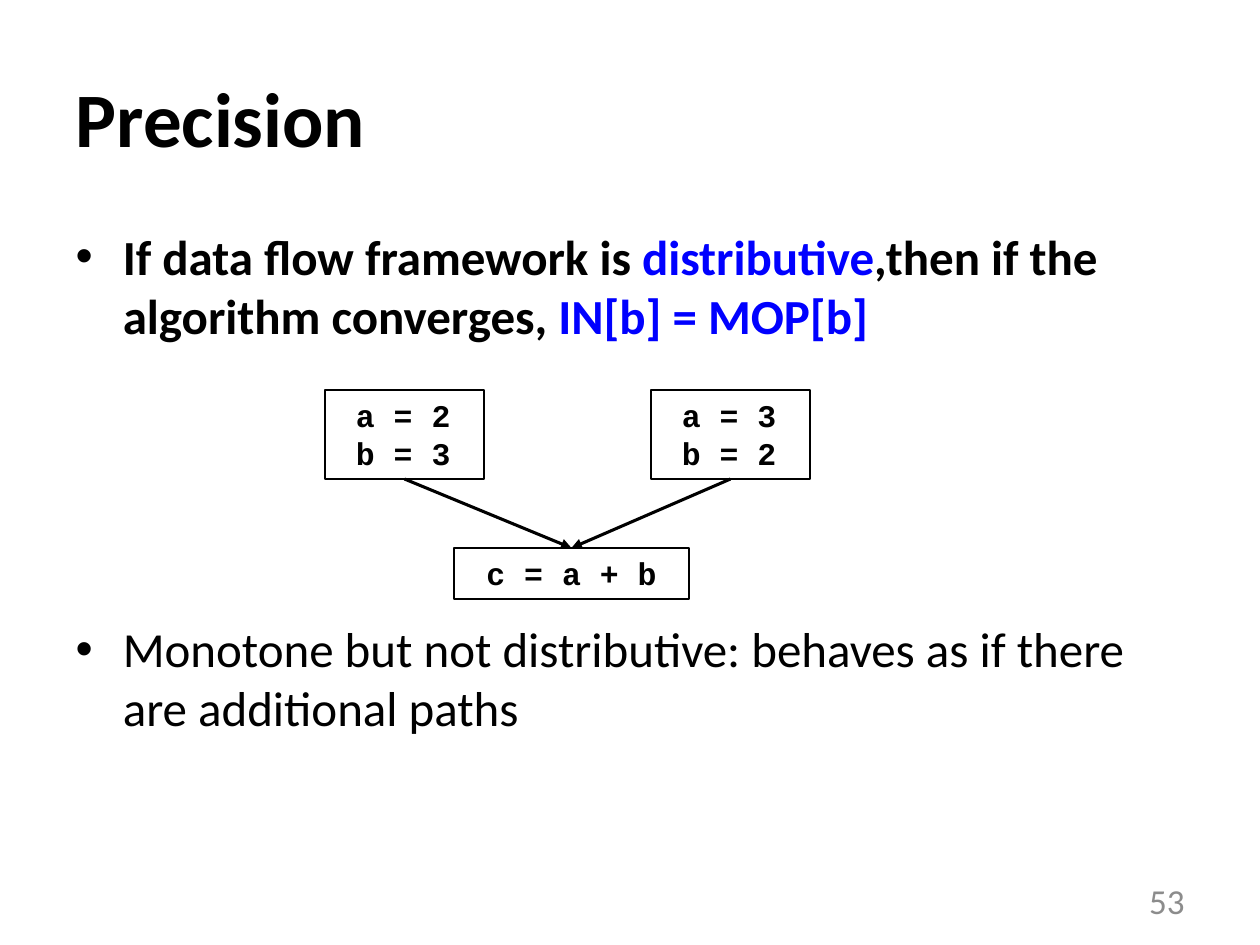
from lxml.etree import SubElement
from pptx import Presentation
from pptx.dml.color import RGBColor
from pptx.enum.shapes import MSO_CONNECTOR, MSO_SHAPE
from pptx.enum.text import MSO_ANCHOR, MSO_AUTO_SIZE, PP_ALIGN
from pptx.oxml.ns import qn
from pptx.util import Emu, Pt

EMU_PER_PX = 914400 / 126
BLACK = RGBColor(0x00, 0x00, 0x00)
BLUE = RGBColor(0x00, 0x00, 0xFF)
GRAY = RGBColor(0x8C, 0x8C, 0x8C)
TOP, BOTTOM = 0, 2


def px(length):
    return Emu(round(length * EMU_PER_PX))


def place(shape, left, top, width, height):
    shape.left, shape.top = px(left), px(top)
    shape.width, shape.height = px(width), px(height)


def style(run, size, color=BLACK, bold=False, name="Calibri"):
    font = run.font
    font.name, font.size, font.bold = name, Pt(size), bold
    font.color.rgb = color


def set_title(slide, text):
    title = slide.shapes.title
    place(title, 63, 38, 1134, 157)
    title.text_frame.text = text
    paragraph = title.text_frame.paragraphs[0]
    paragraph.alignment = PP_ALIGN.LEFT
    style(paragraph.runs[0], 44, bold=True)


def set_bullets(slide):
    body = slide.placeholders[1]
    place(body, 63, 220, 1134, 624)
    frame = body.text_frame
    frame.auto_size = MSO_AUTO_SIZE.NONE
    claim = frame.paragraphs[0]
    for text, color in (
        ("If data flow framework is ", BLACK),
        ("distributive", BLUE),
        (",then if the algorithm converges, ", BLACK),
        ("IN[b] = MOP[b]", BLUE),
    ):
        run = claim.add_run()
        run.text = text
        style(run, 28, color, bold=True)
    caveat = frame.add_paragraph()
    caveat.text = ("Monotone but not distributive: "
                   "behaves as if there are additional paths")
    caveat.space_before = Pt(157)  # room for the flow graph
    style(caveat.runs[0], 28)


def add_page_number(slide, number):
    box = slide.shapes.add_textbox(px(903), px(876), px(294), px(50))
    frame = box.text_frame
    frame.word_wrap = True
    frame.vertical_anchor = MSO_ANCHOR.MIDDLE
    frame.text = number
    paragraph = frame.paragraphs[0]
    paragraph.alignment = PP_ALIGN.RIGHT
    style(paragraph.runs[0], 20, GRAY)


def add_block(slide, bounds, statements, alignment=PP_ALIGN.LEFT):
    """Add a basic block of the flow graph, one statement a line."""
    block = slide.shapes.add_shape(MSO_SHAPE.RECTANGLE, *map(px, bounds))
    block.shadow.inherit = False
    block.fill.background()
    block.line.color.rgb = BLACK
    block.line.width = Pt(1)
    frame = block.text_frame
    frame.word_wrap = True
    frame.vertical_anchor = MSO_ANCHOR.TOP
    frame.margin_left = frame.margin_right = px(12)
    frame.text = "\n".join(statements)
    for paragraph in frame.paragraphs:
        paragraph.alignment = alignment
        style(paragraph.runs[0], 18, bold=True, name="Courier New")
    return block


def add_edge(slide, source, target):
    edge = slide.shapes.add_connector(MSO_CONNECTOR.STRAIGHT, 0, 0, 0, 0)
    edge.begin_connect(source, BOTTOM)
    edge.end_connect(target, TOP)
    edge.line.color.rgb = BLACK
    edge.line.width = Pt(1.75)
    SubElement(edge.line._get_or_add_ln(), qn("a:tailEnd"), type="triangle")
    SubElement(edge._element.spPr, qn("a:effectLst"))


def main():
    presentation = Presentation()
    presentation.slide_width, presentation.slide_height = px(1260), px(945)
    slide = presentation.slides.add_slide(presentation.slide_layouts[1])
    set_title(slide, "Precision")
    set_bullets(slide)
    add_page_number(slide, "53")
    branches = [
        add_block(slide, (left, 390, 159, 89), statements)
        for left, statements in (
            (325, (" a = 2", " b = 3")),
            (651, (" a = 3", " b = 2")),
        )
    ]
    join = add_block(slide, (454, 548, 235, 51), (" c = a + b ",),
                     PP_ALIGN.CENTER)
    for branch in branches:
        add_edge(slide, branch, join)
    presentation.save("out.pptx")


if __name__ == "__main__":
    main()
